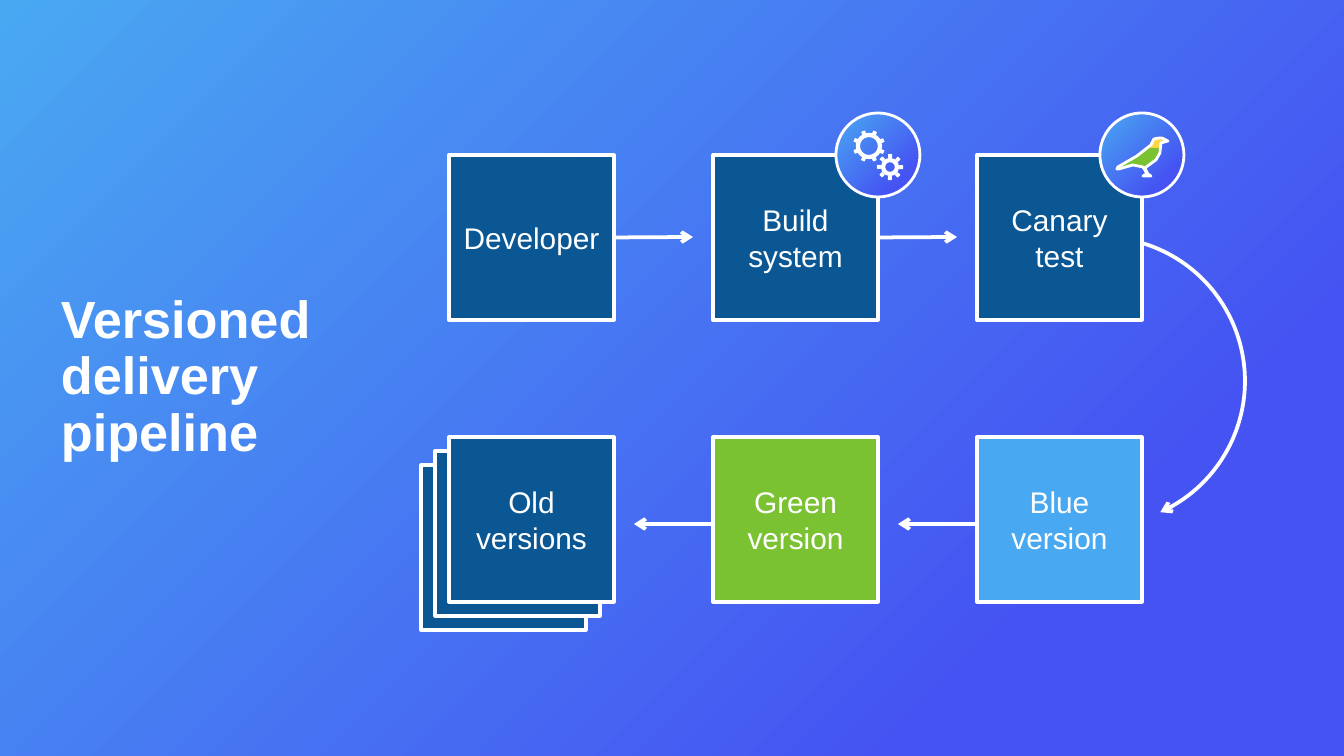
import math

import pptx
import pptx.dml.color
import pptx.enum.shapes
import pptx.enum.text
import pptx.oxml
import pptx.oxml.ns
import pptx.util

PX = 6804  # EMU in one px
THEME = {
    "white": "FFFFFF", "navy": "0A5793", "green": "7BC233", "blue": "49A8F2",
    "yellow": "FDD645", "indigo": "4553F2", "font": "Arial",
    "title_size": 28, "label_size": 16,
}
SHAPE = pptx.enum.shapes.MSO_SHAPE
STRAIGHT = pptx.enum.shapes.MSO_CONNECTOR.STRAIGHT
ALIGN = pptx.enum.text.PP_ALIGN
rgb = pptx.dml.color.RGBColor.from_string
qn = pptx.oxml.ns.qn
NAMESPACE = pptx.oxml.ns.nsdecls("a")


def style(shape, fill=None, line_width=None):
    shape.shadow.inherit = False
    if fill:
        shape.fill.solid()
        shape.fill.fore_color.rgb = rgb(THEME[fill])
    else:
        shape.fill.background()
    if line_width:
        shape.line.color.rgb = rgb(THEME["white"])
        shape.line.width = pptx.util.Pt(line_width)
    else:
        shape.line.fill.background()
    return shape


def write_text(shape, text, size, bold=False, align=ALIGN.CENTER, spacing=None, inset=13):
    frame = shape.text_frame
    frame.word_wrap = True
    frame.vertical_anchor = pptx.enum.text.MSO_ANCHOR.MIDDLE
    frame.margin_left = frame.margin_right = inset * PX
    paragraph = frame.paragraphs[0]
    paragraph.alignment = align
    paragraph.line_spacing = spacing
    run = paragraph.add_run()
    run.text = text
    run.font.name = THEME["font"]
    run.font.size = pptx.util.Pt(size)
    run.font.bold = bold
    run.font.color.rgb = rgb(THEME["white"])


presentation = pptx.Presentation()
presentation.slide_width = 1344 * PX
presentation.slide_height = 756 * PX
slide = presentation.slides.add_slide(presentation.slide_layouts[6])
shapes = slide.shapes

# Title
title = shapes.add_textbox(48 * PX, 337 * PX, 324 * PX, 82 * PX)
write_text(title, "Versioned delivery pipeline", size=THEME["title_size"],
           bold=True, align=ALIGN.LEFT, spacing=0.9)

# Arc from the canary test down to the blue version; it starts behind the box
arc = style(shapes.add_shape(SHAPE.ARC, 957 * PX, 237 * PX, 288 * PX, 288 * PX), line_width=2)
for index, degrees in enumerate((270, 65.65)):
    arc.adjustments[index] = degrees * 0.6
arrows = [arc]

# Older versions stacked behind the front box
box_side, first_left, column_pitch = 165, 449, 264
top_row, bottom_row = 155, 437
for offset in (28, 14):
    style(shapes.add_shape(SHAPE.RECTANGLE, (first_left - offset) * PX, (bottom_row + offset) * PX,
                           box_side * PX, box_side * PX), "navy", 1.75)

# Pipeline boxes
boxes = {}
for label, column, top, fill in (
    ("Developer", 0, top_row, "navy"),
    ("Build system", 1, top_row, "navy"),
    ("Canary test", 2, top_row, "navy"),
    ("Blue version", 2, bottom_row, "blue"),
    ("Green version", 1, bottom_row, "green"),
    ("Old versions", 0, bottom_row, "navy"),
):
    left = first_left + column * column_pitch
    box = style(shapes.add_shape(SHAPE.RECTANGLE, left * PX, top * PX,
                                 box_side * PX, box_side * PX), fill, 1.75)
    write_text(box, label, size=THEME["label_size"], inset=12)
    boxes[label] = box

# Straight arrows: rightwards on top, leftwards below
for label, direction, y in (
    ("Developer", 1, 237), ("Build system", 1, 237),
    ("Blue version", -1, 524), ("Green version", -1, 524),
):
    box = boxes[label]
    start = box.left + box.width if direction > 0 else box.left
    arrow = shapes.add_connector(STRAIGHT, start, y * PX, start + direction * 79 * PX, y * PX)
    if direction > 0:
        arrow.begin_connect(box, 3)
    arrow.line.color.rgb = rgb(THEME["white"])
    arrow.line.width = pptx.util.Pt(2)
    arrow.element.spPr.append(pptx.oxml.parse_xml(f"<a:effectLst {NAMESPACE}/>"))
    arrows.append(arrow)

for arrow in arrows:
    line = arrow.element.spPr.find(qn("a:ln"))
    line.append(pptx.oxml.parse_xml(f'<a:tailEnd {NAMESPACE} type="arrow"/>'))

# Build badge with two gears
build_badge = style(shapes.add_shape(SHAPE.OVAL, 836 * PX, 113 * PX, 84 * PX, 84 * PX), line_width=1.5)
tooth_side = 4
for center_x, center_y, ring_radius, tooth_radius, first_angle in (
    (869, 146, 11, 14, 23), (890, 167, 7, 11, 1),
):
    gear = shapes.add_group_shape().shapes
    style(gear.add_shape(SHAPE.OVAL, (center_x - ring_radius) * PX, (center_y - ring_radius) * PX,
                         2 * ring_radius * PX, 2 * ring_radius * PX), line_width=2.25)
    for angle in range(first_angle, first_angle + 360, 45):
        x = center_x + tooth_radius * math.sin(math.radians(angle)) - tooth_side / 2
        y = center_y - tooth_radius * math.cos(math.radians(angle)) - tooth_side / 2
        tooth = style(gear.add_shape(SHAPE.ROUNDED_RECTANGLE, round(x * PX), round(y * PX),
                                     tooth_side * PX, tooth_side * PX), "white")
        tooth.rotation = angle

# Canary badge: colour bands seen through a bird-shaped hole in a disc
for top, height, fill in ((130, 50, "yellow"), (148, 21, "green")):
    style(shapes.add_shape(SHAPE.RECTANGLE, 1112 * PX, top * PX, 60 * PX, height * PX), fill)
bird = [
    (1159, 138), (1154, 139), (1151, 145), (1137, 156), (1118, 167), (1117, 169),
    (1119, 169), (1133, 165), (1143, 167), (1145, 170), (1147, 174), (1143, 176),
    (1148, 176), (1151, 176), (1148, 174), (1145, 168), (1149, 165), (1156, 160),
    (1160, 153), (1161, 143), (1168, 141), (1162, 138),
]
disc = [
    (1142 + 42 * math.cos(math.radians(angle)), 155 + 42 * math.sin(math.radians(angle)))
    for angle in range(0, 360, 5)
]
outline = shapes.build_freeform(bird[0][0] * PX, bird[0][1] * PX)
outline.add_line_segments([(x * PX, y * PX) for x, y in bird[1:]])
outline.move_to(disc[0][0] * PX, disc[0][1] * PX)
outline.add_line_segments([(x * PX, y * PX) for x, y in disc[1:]])
canary_badge = style(outline.convert_to_shape(), line_width=1.5)

# Gradient spreading from the bottom right corner, shared by background and badges
for fill in (slide.background.fill, build_badge.fill, canary_badge.fill):
    fill.gradient()
    for stop, color, position in zip(fill.gradient_stops, ("indigo", "blue"), (0.21, 1)):
        stop.color.rgb = rgb(THEME[color])
        stop.position = position
for gradient in list(slide.element.iter(qn("a:gradFill"))):
    gradient.replace(gradient.find(qn("a:lin")), pptx.oxml.parse_xml(
        f'<a:path {NAMESPACE} path="circle"><a:fillToRect l="100000" t="100000"/></a:path>'))
    gradient.append(pptx.oxml.parse_xml(f'<a:tileRect {NAMESPACE} r="-100000" b="-100000"/>'))

presentation.save("out.pptx")
